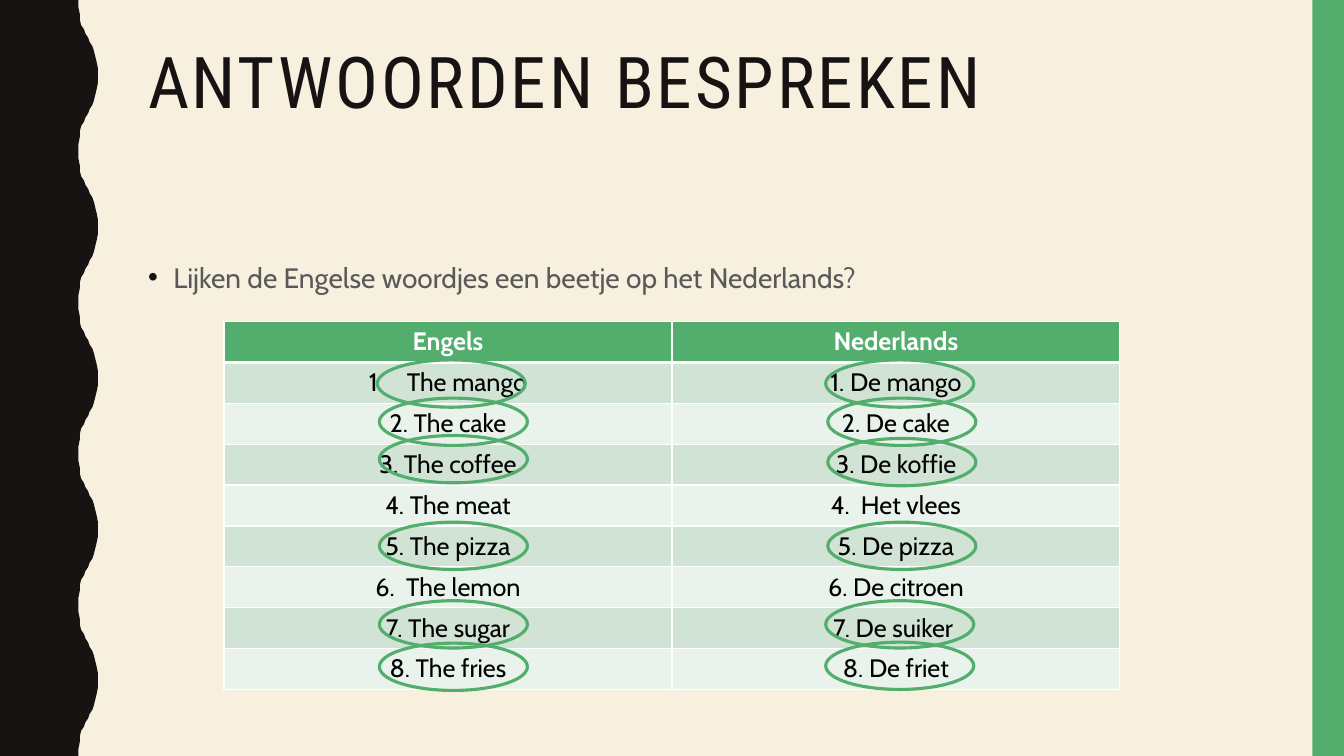
from dataclasses import dataclass

from lxml.etree import SubElement
from pptx import Presentation
from pptx.dml.color import RGBColor
from pptx.enum.shapes import MSO_SHAPE as Shape
from pptx.enum.text import MSO_ANCHOR as Anchor, PP_ALIGN as Align
from pptx.oxml.ns import qn
from pptx.util import Pt


@dataclass(frozen=True)
class Theme:
    paper: str = "F7F0DF"
    ink: str = "171312"
    green: str = "53AE6E"
    grey: str = "595959"
    white: str = "FFFFFF"
    black: str = "000000"
    bands: tuple = ("D1E3D5", "E9F2EB")
    title_font: str = "Roboto Condensed"
    body_font: str = "Cabin"
    title_size: int = 51
    body_size: int = 20
    table_size: int = 18


THEME = Theme()
WIDTH, HEIGHT = 960, 540

# Half a wave, trough to crest: (across, down)
HALF_WAVE = [(0, 0), (0, 5), (0.7, 10), (1.4, 14.4), (2.2, 18), (3.6, 21), (5, 24),
             (6.5, 27), (7.9, 30), (9.4, 33), (10.8, 36), (12.2, 39.6), (13, 44),
             (13.7, 49), (13.7, 54)]
WAVES = 5

HEADINGS = ("Engels", "Nederlands")
# English word, Dutch word, ring offsets from the left and top of each cell
WORDS = [
    ("The mango", "1. De mango", ((109.5, -1.8), (109.8, -1.8))),
    ("2. The cake", "2. De cake", ((111, -3.7), (111.3, -3.7))),
    ("3. The coffee", "3. De koffie", ((111, -6.2), (111.3, -4.1))),
    ("4. The meat", "4.  Het vlees", ()),
    ("5. The pizza", "5. De pizza", ((111, -2.7), (111.3, -2.7))),
    ("6.  The lemon", "6. De citroen", ()),
    ("7. The sugar", "7. De suiker ", ((111, -5), (109.8, -5))),
    ("8. The fries", "8. De friet", ((111, -3.9), (109.8, -4.6))),
]
RING_WIDTH, RING_HEIGHT = 105.8, 33.8


def rgb(colour):
    return RGBColor.from_string(colour)


def paint(shape, colour):
    shape.shadow.inherit = False
    shape.fill.solid()
    shape.fill.fore_color.rgb = rgb(colour)
    shape.line.fill.background()


def style(paragraph, font, size, colour, bold=False):
    paragraph.font.name = font
    paragraph.font.size = Pt(size)
    paragraph.font.color.rgb = rgb(colour)
    paragraph.font.bold = bold


def add_line(slide, box, text):
    frame = slide.shapes.add_textbox(*map(Pt, box)).text_frame
    frame.word_wrap = True
    frame.vertical_anchor = Anchor.TOP
    frame.text = text
    return frame.paragraphs[0]


def hang(paragraph, indent):
    properties = paragraph._p.get_or_add_pPr()
    properties.set("marL", str(Pt(indent)))
    properties.set("indent", str(-Pt(indent)))
    return properties


def add_bullet(properties, tag, **attributes):
    # Bullets come before the default run properties
    bullet = SubElement(properties, qn(tag), attributes)
    defaults = properties.find(qn("a:defRPr"))
    if defaults is not None:
        defaults.addprevious(bullet)
    return bullet


def add_wavy_edge(slide, box):
    left, top, width, height = box
    period = height / WAVES
    trough = left + width - HALF_WAVE[-1][0]
    wave = HALF_WAVE + [(x, period - y) for x, y in HALF_WAVE[-2::-1]]
    edge = [(trough + x, top + n * period + y) for n in range(WAVES) for x, y in wave]
    builder = slide.shapes.build_freeform(left, top, scale=Pt(1))
    builder.add_line_segments(edge + [(left, top + height)], close=True)
    paint(builder.convert_to_shape(), THEME.ink)


def add_side_bar(slide, box):
    paint(slide.shapes.add_shape(Shape.RECTANGLE, *map(Pt, box)), THEME.green)


def add_title(slide, box, text):
    title = add_line(slide, box, text)
    title.line_spacing = 0.9
    style(title, THEME.title_font, THEME.title_size, THEME.ink)
    title.runs[0].font._element.set("spc", "200")


def add_question(slide, box, text):
    question = add_line(slide, box, text)
    question.line_spacing = 1.1
    question.space_before = Pt(7)
    style(question, THEME.body_font, THEME.body_size, THEME.grey)
    properties = hang(question, 18)
    colour = add_bullet(properties, "a:buClr")
    SubElement(colour, qn("a:srgbClr"), val=THEME.ink)
    add_bullet(properties, "a:buFont", typeface="Arial")
    add_bullet(properties, "a:buChar", char="•")


def set_borders(cell, top, bottom):
    properties = cell._tc.get_or_add_tcPr()
    for place, (side, width) in enumerate(zip("LRTB", (1, 1, top, bottom))):
        border = SubElement(properties, qn(f"a:ln{side}"), w=str(Pt(width)))
        SubElement(SubElement(border, qn("a:solidFill")), qn("a:srgbClr"), val=THEME.white)
        properties.insert(place, border)


def add_word_table(slide, box):
    rows = [HEADINGS] + [words[:2] for words in WORDS]
    table = slide.shapes.add_table(len(rows), len(HEADINGS), *map(Pt, box)).table
    for row in table.rows:
        row.height = Pt(box[3] / len(rows))
    for r, texts in enumerate(rows):
        header = r == 0
        for c, text in enumerate(texts):
            cell = table.cell(r, c)
            cell.text = text
            cell.fill.solid()
            cell.fill.fore_color.rgb = rgb(THEME.green if header else THEME.bands[(r - 1) % 2])
            set_borders(cell, top=3 if r == 1 else 1, bottom=3 if header else 1)
            word = cell.text_frame.paragraphs[0]
            word.alignment = Align.CENTER
            style(word, THEME.body_font, THEME.table_size,
                  THEME.white if header else THEME.black, header)
    # The first English word carries an automatic number
    numbered = table.cell(1, 0).text_frame.paragraphs[0]
    add_bullet(hang(numbered, 27), "a:buAutoNum", type="arabicPeriod")


def add_rings(slide, box):
    left, top, width, height = box
    column, row = width / len(HEADINGS), height / (len(WORDS) + 1)
    for r, (_, _, offsets) in enumerate(WORDS, start=1):
        for c, (dx, dy) in enumerate(offsets):
            ring = slide.shapes.add_shape(
                Shape.OVAL, Pt(left + c * column + dx), Pt(top + r * row + dy),
                Pt(RING_WIDTH), Pt(RING_HEIGHT))
            ring.shadow.inherit = False
            ring.fill.background()
            ring.line.color.rgb = rgb(THEME.green)
            ring.line.width = Pt(2.25)


def main():
    deck = Presentation()
    deck.slide_width, deck.slide_height = Pt(WIDTH), Pt(HEIGHT)
    slide = deck.slides.add_slide(deck.slide_layouts[6])
    slide.background.fill.solid()
    slide.background.fill.fore_color.rgb = rgb(THEME.paper)

    # Decoration at both sides
    add_wavy_edge(slide, (0, 0, 69.8, HEIGHT))
    add_side_bar(slide, (937.5, 0, 22.5, HEIGHT))

    # Title, question and answers
    add_title(slide, (98.7, 30.2, 801.3, 117.4), "ANTWOORDEN BESPREKEN")
    add_question(slide, (98.7, 180, 801.3, 283),
                 "Lijken de Engelse woordjes een beetje op het Nederlands?")
    answers = (160, 229.7, 640, 262.8)
    add_word_table(slide, answers)
    add_rings(slide, answers)
    deck.save("out.pptx")


if __name__ == "__main__":
    main()
